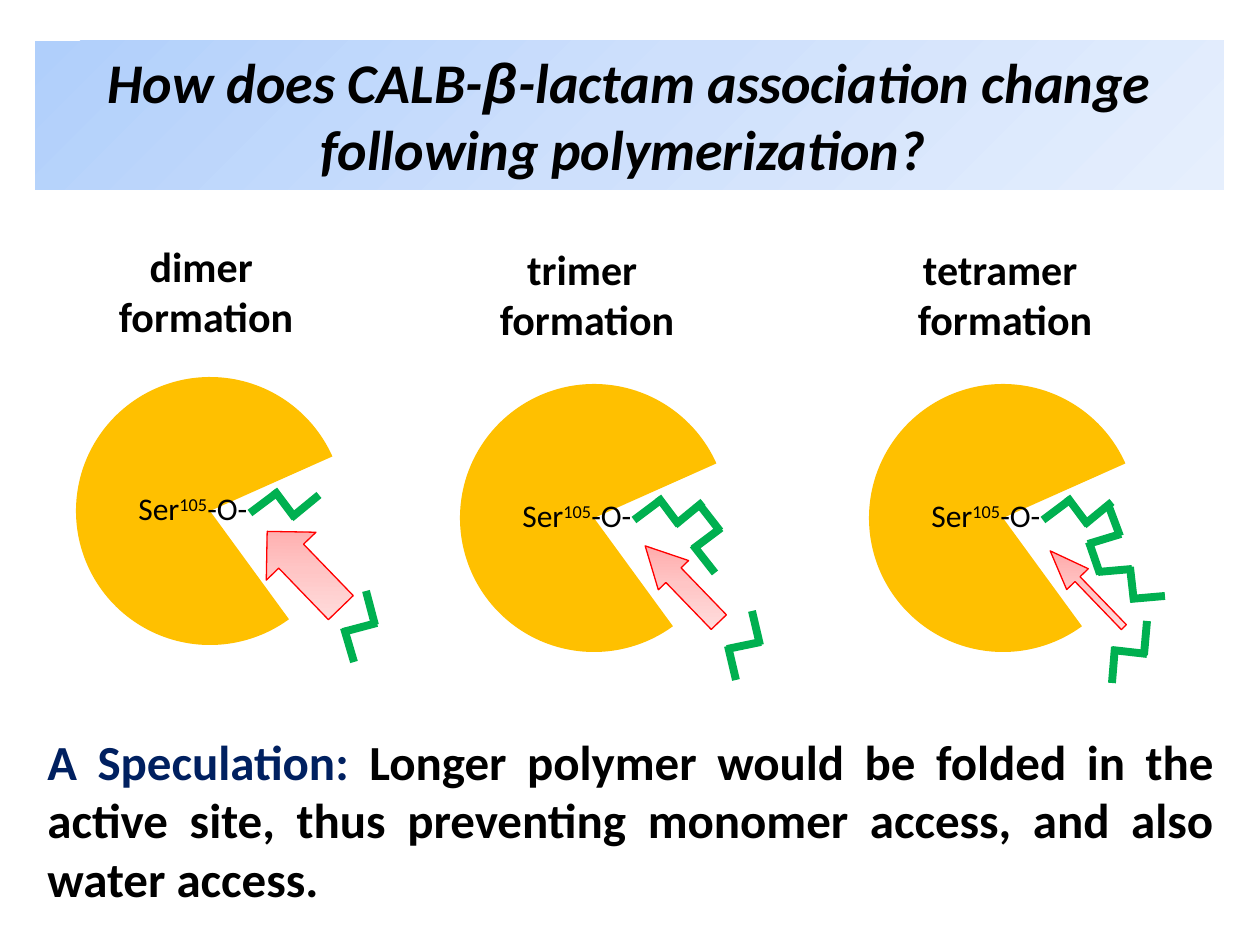
from copy import deepcopy

from lxml.etree import SubElement
from pptx import Presentation
from pptx.dml.color import RGBColor
from pptx.enum.shapes import MSO_CONNECTOR, MSO_SHAPE
from pptx.enum.text import MSO_ANCHOR, MSO_AUTO_SIZE, PP_ALIGN
from pptx.oxml.ns import qn
from pptx.util import Emu, Pt

EMU_PER_PX = 914400 / 126
BLACK = RGBColor(0x00, 0x00, 0x00)
NAVY = RGBColor(0x00, 0x20, 0x60)
GREEN = RGBColor(0x00, 0xB0, 0x50)
AMBER = RGBColor(0xFF, 0xC0, 0x00)
RED = RGBColor(0xFF, 0x00, 0x00)
BLUES = (RGBColor(0xB0, 0xCF, 0xFB), RGBColor(0xCE, 0xE0, 0xFC), RGBColor(0xE6, 0xEF, 0xFD))
PINKS = (RGBColor(0xFF, 0xA0, 0xA0), RGBColor(0xFF, 0xC5, 0xC5), RGBColor(0xFF, 0xE3, 0xE3))

TITLE_FORMAT = {"name": "Calibri", "size": Pt(32), "bold": True, "italic": True}
LABEL_FORMAT = {"name": "Calibri", "size": Pt(24), "bold": True}
RESIDUE_FORMAT = {"name": "Calibri", "size": Pt(18)}
CLOSING_FORMAT = {"name": "Calibri", "size": Pt(28), "bold": True}

BOUND_CHAIN = [(174, 136, 202, 115), (215, 141, 243, 118), (198, 113, 219, 141)]
STAGES = [
    {
        "name": "dimer ", "origin": (76, 377), "label": (29, -143),
        "chains": [[(290, 214, 299, 248), (268, 251, 278, 285), (301, 246, 267, 255)]],
        "arrow": (175, 158, 106, 69), "arrow_adjustments": (0.5, 0.5),
    },
    {
        "name": "trimer ", "origin": (460, 384), "label": (26, -147),
        "chains": [
            [(239, 120, 260, 147), (233, 161, 255, 189), (261, 144, 233, 165)],
            [(292, 227, 300, 261), (268, 262, 276, 296), (301, 258, 267, 265)],
        ],
        "arrow": (169, 179, 106, 42), "arrow_adjustments": (0.5, 0.97),
    },
    {
        "name": "tetramer ", "origin": (869, 384), "label": (35, -147),
        "chains": [
            [(239, 120, 251, 152), (220, 158, 231, 190), (252, 150, 219, 160)],
            [(278, 237, 275, 271), (246, 263, 243, 299), (278, 270, 243, 266)],
            [(296, 212, 261, 215), (263, 185, 229, 188), (265, 218, 261, 183)],
        ],
        "arrow": (165, 190, 106, 30), "arrow_adjustments": (0.23, 1.31),
    },
]


def px(*lengths):
    return [Emu(round(length * EMU_PER_PX)) for length in lengths]


def set_attributes(target, values):
    for name, value in values.items():
        setattr(target, name, value)


def add_runs(paragraph, runs, text_format):
    for text, changes in runs:
        run = paragraph.add_run()
        run.text = text
        run.font.color.rgb = BLACK
        set_attributes(run.font, {**text_format, **changes})
    return paragraph.runs


def add_shape(slide, kind, box, adjustments=(), rotation=0):
    shape = slide.shapes.add_shape(kind, *px(*box))
    shape.shadow.inherit = False
    shape.rotation = rotation
    for index, value in enumerate(adjustments):
        shape.adjustments[index] = value
    shape.line.fill.background()
    return shape


def fill_gradient(shape, colors):
    shape.fill.gradient()
    shape.fill.gradient_angle = 315
    stop_list = shape.element.spPr.find(qn("a:gradFill")).find(qn("a:gsLst"))
    stop_list.append(deepcopy(stop_list[0]))
    for index, (stop, color) in enumerate(zip(shape.fill.gradient_stops, colors)):
        stop.position = index / 2
        stop.color.rgb = color


def add_text_box(slide, box, wrap):
    text_box = slide.shapes.add_textbox(*px(*box))
    set_attributes(text_box.text_frame, {"word_wrap": wrap, "auto_size": MSO_AUTO_SIZE.SHAPE_TO_FIT_TEXT})
    return text_box.text_frame


def add_title(slide, box):
    banner = add_shape(slide, MSO_SHAPE.RECTANGLE, box)
    fill_gradient(banner, BLUES)
    set_attributes(banner.text_frame, {
        "word_wrap": True,
        "auto_size": MSO_AUTO_SIZE.SHAPE_TO_FIT_TEXT,
        "vertical_anchor": MSO_ANCHOR.TOP,
    })
    paragraph = banner.text_frame.paragraphs[0]
    paragraph.alignment = PP_ALIGN.CENTER
    runs = [
        ("How does CALB-", {}),
        ("β", {"name": "Arial"}),
        ("-lactam association change following polymerization? ", {}),
    ]
    add_runs(paragraph, runs, TITLE_FORMAT)


def add_chain(slide, left, top, segments):
    group = slide.shapes.add_group_shape()
    for x1, y1, x2, y2 in segments:
        ends = px(left + x1, top + y1, left + x2, top + y2)
        connector = group.shapes.add_connector(MSO_CONNECTOR.STRAIGHT, *ends)
        connector.line.color.rgb = GREEN
        connector.line.width = Pt(4.5)
        SubElement(connector.element.spPr, qn("a:effectLst"))


def add_stage(slide, box, stage):
    left, top, width, height = box
    enzyme = add_shape(slide, MSO_SHAPE.PIE, box, (23.81, 193.07), 14.2)
    enzyme.fill.solid()
    enzyme.fill.fore_color.rgb = AMBER

    residue = add_text_box(slide, (left + 50, top + 106, 140, 50), False)
    runs = [("Ser", {}), ("105", {}), ("-O-", {})]
    residue_runs = add_runs(residue.paragraphs[0], runs, RESIDUE_FORMAT)
    residue_runs[1].font.element.set("baseline", "30000") if hasattr(
        residue_runs[1].font, "element"
    ) else residue_runs[1]._r.get_or_add_rPr().set("baseline", "30000")

    for segments in [BOUND_CHAIN, *stage["chains"]]:
        add_chain(slide, left, top, segments)

    label_x, label_y = stage["label"]
    label = add_text_box(slide, (left + label_x, top + label_y, 202, 115), False)
    for paragraph, text in zip((label.paragraphs[0], label.add_paragraph()), (stage["name"], "formation")):
        paragraph.alignment = PP_ALIGN.CENTER
        add_runs(paragraph, [(text, {})], LABEL_FORMAT)

    arrow_x, arrow_y, arrow_width, arrow_height = stage["arrow"]
    arrow_box = (left + arrow_x, top + arrow_y, arrow_width, arrow_height)
    arrow = add_shape(slide, MSO_SHAPE.LEFT_ARROW, arrow_box, stage["arrow_adjustments"], 46)
    fill_gradient(arrow, PINKS)
    arrow.line.color.rgb = RED
    arrow.line.width = Pt(0.75)


def add_closing(slide, box):
    paragraph = add_text_box(slide, box, True).paragraphs[0]
    paragraph.alignment = PP_ALIGN.JUSTIFY
    statement = (
        "Longer polymer would be folded in the active site, "
        "thus preventing monomer access, and also water access. "
    )
    lead, _ = add_runs(paragraph, [("A Speculation: ", {}), (statement, {})], CLOSING_FORMAT)
    lead.font.color.rgb = NAVY


def main():
    presentation = Presentation()
    presentation.slide_width, presentation.slide_height = px(1260, 945)
    slide = presentation.slides.add_slide(presentation.slide_layouts[6])
    add_title(slide, (35, 41, 1189, 149))
    for stage in STAGES:
        add_stage(slide, (*stage["origin"], 268, 268), stage)
    add_closing(slide, (35, 725, 1191, 190))
    presentation.save("out.pptx")


if __name__ == "__main__":
    main()
